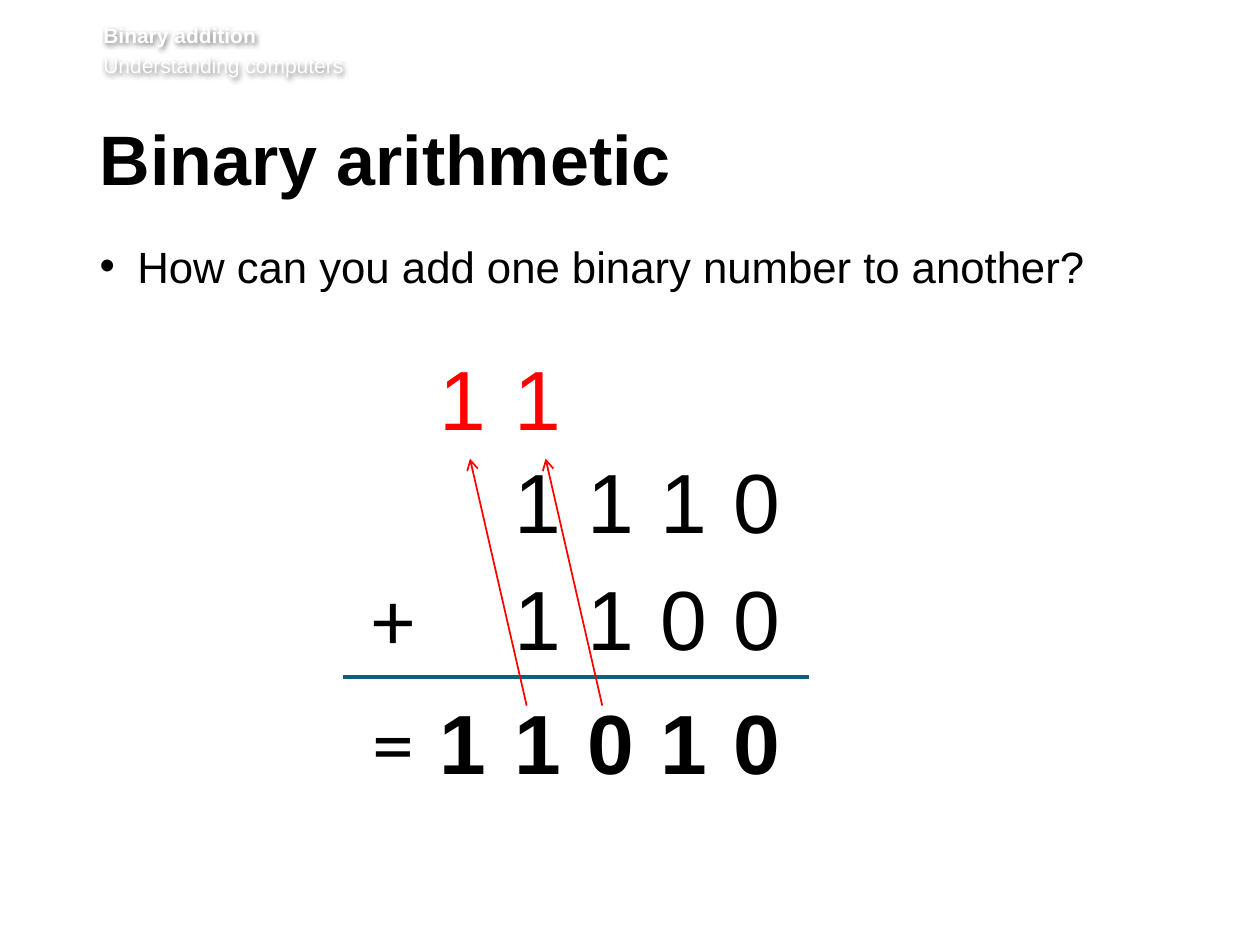
from dataclasses import dataclass

from lxml import etree
from pptx import Presentation, util as u
from pptx.dml.color import RGBColor
from pptx.enum import shapes, text
from pptx.oxml.ns import qn


@dataclass(frozen=True)
class Theme:
    font: str = "Arial"
    symbol_font: str = "Calibri"
    ink: str = "000000"
    paper: str = "FFFFFF"
    carry: str = "FF0000"
    rule: str = "0F6078"
    shadow: str = "808080"
    header: int = 12
    body: int = 25
    title: int = 40
    digit: int = 48


@dataclass(frozen=True)
class SumRow:
    top: float
    cells: str  # one character per grid column
    color: str
    bold: bool = False


@dataclass(frozen=True)
class Stroke:
    start: tuple[float, float]
    end: tuple[float, float]
    color: str
    width: float
    arrow: bool = False


THEME = Theme()
CELL_W, CELL_H = 0.58, 0.91
# Operator column, carry column, then four evenly spaced digit columns
COLUMNS = (2.83, 3.38, *(3.98 + CELL_W * i for i in range(4)))
ROWS = (
    SumRow(2.7, " 11   ", THEME.carry),
    SumRow(3.52, "  1110", THEME.ink),
    SumRow(4.45, "+ 1100", THEME.ink),
    SumRow(5.43, "=11010", THEME.ink, bold=True),
)
RULE_Y, ARROW_TOP, ARROW_BOTTOM = 5.37, 3.64, 5.6
STROKES = (
    Stroke((2.72, RULE_Y), (6.42, RULE_Y), THEME.rule, 2.25),
    *(Stroke((x, ARROW_BOTTOM), (x - 0.45, ARROW_TOP), THEME.carry, 1, True)
      for x in (4.78, 4.18)),
)


def add_box(s, at, insets=(0.1, 0.05, 0.1, 0.05), wrap=True):
    sp = s.shapes.add_textbox(*(u.Inches(v) for v in at))
    tf = sp.text_frame
    tf.word_wrap = wrap
    tf.margin_left, tf.margin_top, tf.margin_right, tf.margin_bottom = (
        u.Inches(v) for v in insets)
    return sp


def add_run(p, words: str, size: int, color: str, bold: bool = False,
            font: str = THEME.font) -> None:
    r = p.add_run()
    r.text = words
    r.font.name, r.font.size, r.font.bold = font, u.Pt(size), bold
    r.font.color.rgb = RGBColor.from_string(color)


def add_header(s) -> None:
    sp = add_box(s, (0.82, 0.17, 8.82, 0.49), (0, 0.01, 0, 0.05))
    tf = sp.text_frame
    add_run(tf.paragraphs[0], "Binary addition", THEME.header, THEME.paper, True)
    p = tf.add_paragraph()
    p.space_before = u.Pt(2.9)
    add_run(p, "Understanding computers", THEME.header, THEME.paper)
    # Soft shadow that makes the white words readable
    effects = etree.SubElement(sp._element.spPr, qn("a:effectLst"))
    shadow = etree.SubElement(effects, qn("a:outerShdw"), blurRad="38100",
                              dist="12700", dir="2700000", algn="tl", rotWithShape="0")
    etree.SubElement(shadow, qn("a:srgbClr"), val=THEME.shadow)


def add_title(s) -> None:
    p = add_box(s, (0.79, 0.99, 8.55, 0.73), (0, 0.05, 0.1, 0.05)).text_frame.paragraphs[0]
    p.line_spacing = u.Pt(39)
    add_run(p, "Binary arithmetic", THEME.title, THEME.ink, True)


def add_question(s) -> None:
    p = add_box(s, (0.79, 1.86, 8.53, 3.78), (0, 0.04, 0.1, 0.05)).text_frame.paragraphs[0]
    props = p._p.get_or_add_pPr()
    props.set("marL", str(u.Inches(0.3)))
    props.set("indent", str(-u.Inches(0.3)))
    etree.SubElement(props, qn("a:buFont"), typeface=THEME.font)
    etree.SubElement(props, qn("a:buChar"), char="•")
    add_run(p, "How can you add one binary number to another?", THEME.body, THEME.ink)


def add_sum_row(s, row: SumRow) -> None:
    for left, char in zip(COLUMNS, row.cells):
        if char == " ":
            continue
        sp = add_box(s, (left, row.top, CELL_W, CELL_H), wrap=False)
        p = sp.text_frame.paragraphs[0]
        p.alignment = text.PP_ALIGN.CENTER
        digit = char.isdigit()
        add_run(p, char, THEME.digit, row.color, row.bold and digit,
                THEME.font if digit else THEME.symbol_font)


def add_stroke(s, stroke: Stroke) -> None:
    sp = s.shapes.add_connector(shapes.MSO_CONNECTOR.STRAIGHT,
                                *(u.Inches(v) for v in stroke.start + stroke.end))
    sp.line.color.rgb = RGBColor.from_string(stroke.color)
    sp.line.width = u.Pt(stroke.width)
    if stroke.arrow:
        etree.SubElement(sp.line._get_or_add_ln(), qn("a:tailEnd"), type="arrow")
    etree.SubElement(sp._element.spPr, qn("a:effectLst"))


def main() -> None:
    prs = Presentation()
    prs.slide_width, prs.slide_height = u.Inches(10), u.Inches(7.5)
    s = prs.slides.add_slide(prs.slide_layouts[6])

    # Heading and question
    add_header(s)
    add_title(s)
    add_question(s)

    # Worked addition with its rule and carry arrows
    for row in ROWS:
        add_sum_row(s, row)
    for stroke in STROKES:
        add_stroke(s, stroke)

    prs.save("out.pptx")


if __name__ == "__main__":
    main()
